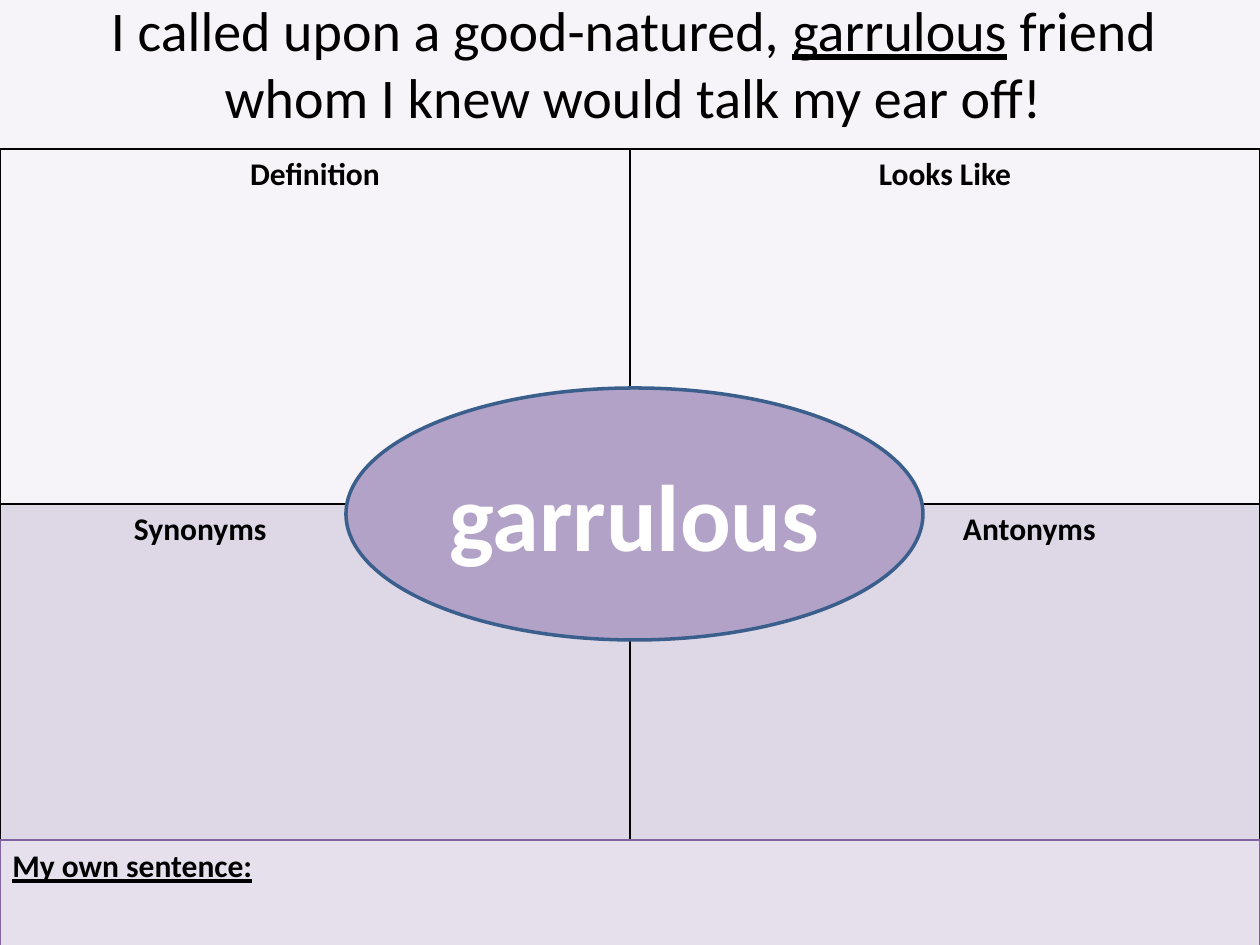
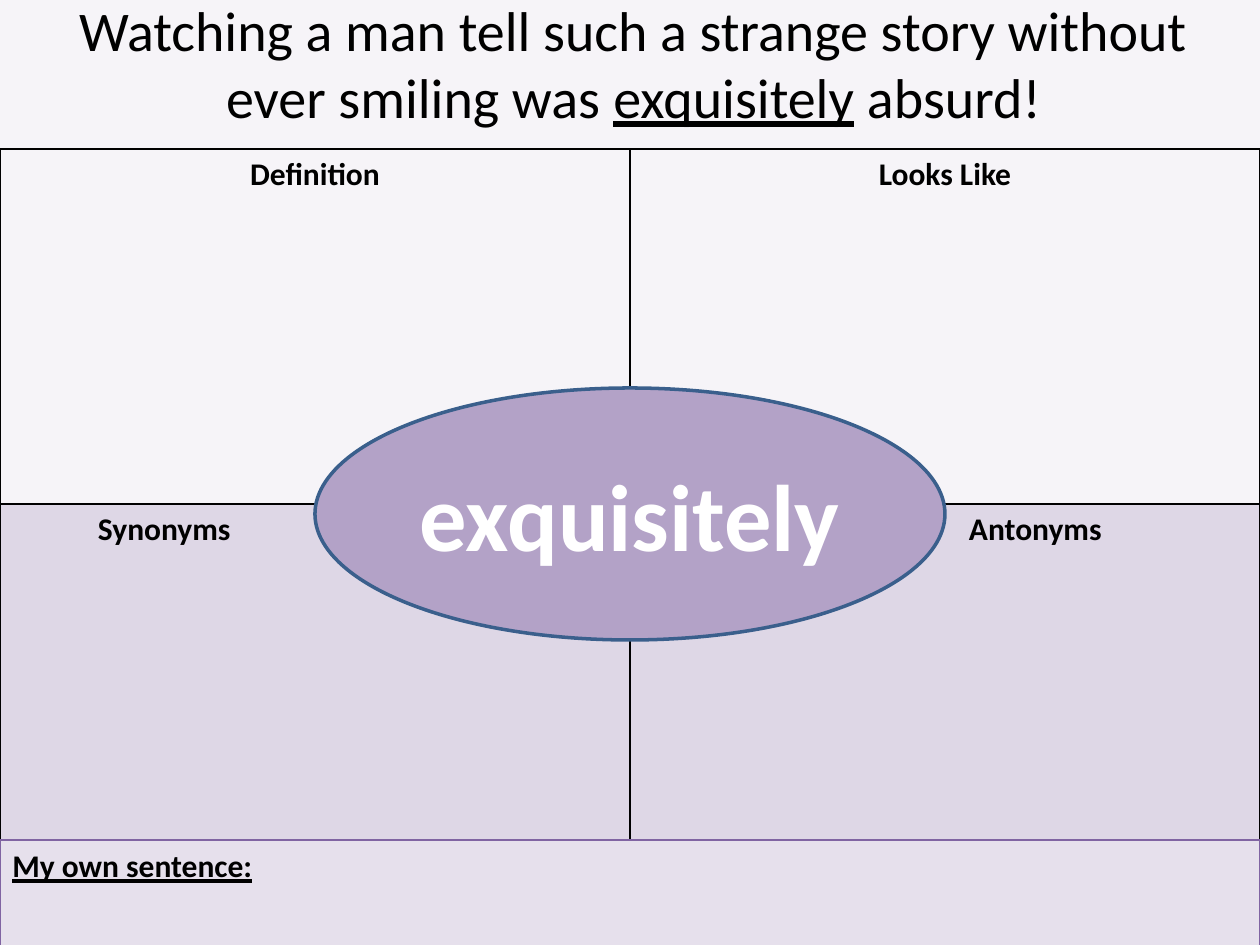
from dataclasses import dataclass

from lxml.etree import SubElement
from pptx import Presentation
from pptx.dml.color import RGBColor
from pptx.enum.shapes import MSO_SHAPE
from pptx.enum.text import MSO_ANCHOR, MSO_AUTO_SIZE, PP_ALIGN
from pptx.oxml import parse_xml
from pptx.oxml.ns import nsdecls, qn
from pptx.util import Emu, Pt

EMU_PER_INCH = 914400
PX_PER_INCH = 126
SLIDE_WIDTH, SLIDE_HEIGHT = 1260, 945
GRID_TOP = 149
COLUMN_WIDTH = SLIDE_WIDTH // 2
ROW_HEIGHTS = (355, 393)
OVAL_TOP, OVAL_HEIGHT = 388, 252
COLORS = {
    "ink": "000000",
    "white": "FFFFFF",
    "lilac": "E6E0EC",
    "purple": "8064A2",
    "oval": "B3A2C7",
    "oval_edge": "3A5F8C",
}
FONT = "Calibri"


@dataclass(frozen=True)
class VocabularyWord:
    word: str
    sentence: str
    oval_left: int
    oval_width: int
    synonyms_indent: int
    antonyms_indent: int


@dataclass(frozen=True)
class Quadrant:
    row: int
    column: int
    heading: str
    indent: int = 0
    shaded: bool = False


WORDS = (
    VocabularyWord(
        "garrulous",
        "I called upon a good-natured, garrulous friend whom I knew would talk my ear off!",
        346, 577, 134, 333,
    ),
    VocabularyWord(
        "exquisitely",
        "Watching a man tell such a strange story without ever smiling was exquisitely absurd!",
        315, 630, 98, 339,
    ),
)


def px(length: int) -> Emu:
    return Emu(round(length * EMU_PER_INCH / PX_PER_INCH))


def rgb(name: str) -> RGBColor:
    return RGBColor.from_string(COLORS[name])


def set_opacity(element, percent: int) -> None:
    for color in element.iter(qn("a:srgbClr")):
        SubElement(color, qn("a:alpha"), val=str(percent * 1000))


def write_text(frame, text: str, *, size: int = 18, color: str = "ink", bold: bool = True,
               underlined: str = "", align=PP_ALIGN.CENTER, anchor=MSO_ANCHOR.TOP) -> None:
    frame.word_wrap = True
    frame.vertical_anchor = anchor
    paragraph = frame.paragraphs[0]
    paragraph.alignment = align
    parts = text.partition(underlined) if underlined else (text,)
    for part in filter(None, parts):
        run = paragraph.add_run()
        run.text = part
        run.font.name = FONT
        run.font.size = Pt(size)
        run.font.bold = bold
        run.font.underline = part == underlined
        run.font.color.rgb = rgb(color)


def add_panel(slide, preset, box: tuple[int, int, int, int], fill: str, edge: str,
              edge_width: float):
    panel = slide.shapes.add_shape(preset, *map(px, box))
    panel.shadow.inherit = False
    panel.fill.solid()
    panel.fill.fore_color.rgb = rgb(fill)
    panel.line.color.rgb = rgb(edge)
    panel.line.width = Pt(edge_width)
    return panel


def add_borders(cell) -> None:
    properties = cell._tc.get_or_add_tcPr()
    for position, side in enumerate(("lnL", "lnR", "lnT", "lnB")):
        properties.insert(position, parse_xml(
            f'<a:{side} {nsdecls("a")} w="{Pt(1)}"><a:solidFill>'
            f'<a:srgbClr val="{COLORS["ink"]}"/></a:solidFill></a:{side}>'
        ))


def fill_quadrant(cell, quadrant: Quadrant) -> None:
    if quadrant.shaded:
        cell.fill.solid()
        cell.fill.fore_color.rgb = rgb("purple")
        set_opacity(cell._tc, 20)
    else:
        cell.fill.background()
    add_borders(cell)
    if quadrant.indent:
        cell.margin_left = px(quadrant.indent)
    write_text(cell.text_frame, quadrant.heading,
               align=PP_ALIGN.LEFT if quadrant.indent else PP_ALIGN.CENTER)


def add_word_grid(slide, entry: VocabularyWord) -> None:
    grid = slide.shapes.add_table(
        2, 2, px(0), px(GRID_TOP), px(SLIDE_WIDTH), px(sum(ROW_HEIGHTS))
    ).table
    grid.first_row = False
    grid.horz_banding = False
    for column in grid.columns:
        column.width = px(COLUMN_WIDTH)
    for row, height in zip(grid.rows, ROW_HEIGHTS):
        row.height = px(height)
    quadrants = (
        Quadrant(0, 0, "Definition"),
        Quadrant(0, 1, "Looks Like"),
        Quadrant(1, 0, "Synonyms", entry.synonyms_indent, True),
        Quadrant(1, 1, "Antonyms", entry.antonyms_indent, True),
    )
    for quadrant in quadrants:
        fill_quadrant(grid.cell(quadrant.row, quadrant.column), quadrant)


def add_title(slide, entry: VocabularyWord) -> None:
    title = slide.shapes.title
    title.left, title.top, title.width, title.height = map(px, (40, -11, 1187, 148))
    title.text_frame.auto_size = MSO_AUTO_SIZE.NONE
    write_text(title.text_frame, entry.sentence, size=32, bold=False, underlined=entry.word)


def add_word_slide(presentation, entry: VocabularyWord) -> None:
    slide = presentation.slides.add_slide(presentation.slide_layouts.get_by_name("Title Only"))
    backdrop = slide.background.fill
    backdrop.solid()
    backdrop.fore_color.rgb = rgb("lilac")
    set_opacity(slide.element, 34)
    add_title(slide, entry)
    add_word_grid(slide, entry)

    own_sentence = add_panel(slide, MSO_SHAPE.RECTANGLE, (0, 840, SLIDE_WIDTH, 127),
                             "lilac", "purple", 0.75)
    prompt = "My own sentence:"
    write_text(own_sentence.text_frame, prompt, underlined=prompt, align=PP_ALIGN.LEFT)

    word_oval = add_panel(slide, MSO_SHAPE.OVAL,
                          (entry.oval_left, OVAL_TOP, entry.oval_width, OVAL_HEIGHT),
                          "oval", "oval_edge", 2)
    write_text(word_oval.text_frame, entry.word, size=54, color="white",
               anchor=MSO_ANCHOR.MIDDLE)


def main() -> None:
    presentation = Presentation()
    presentation.slide_width = px(SLIDE_WIDTH)
    presentation.slide_height = px(SLIDE_HEIGHT)
    for entry in WORDS:
        add_word_slide(presentation, entry)
    presentation.save("out.pptx")


if __name__ == "__main__":
    main()
